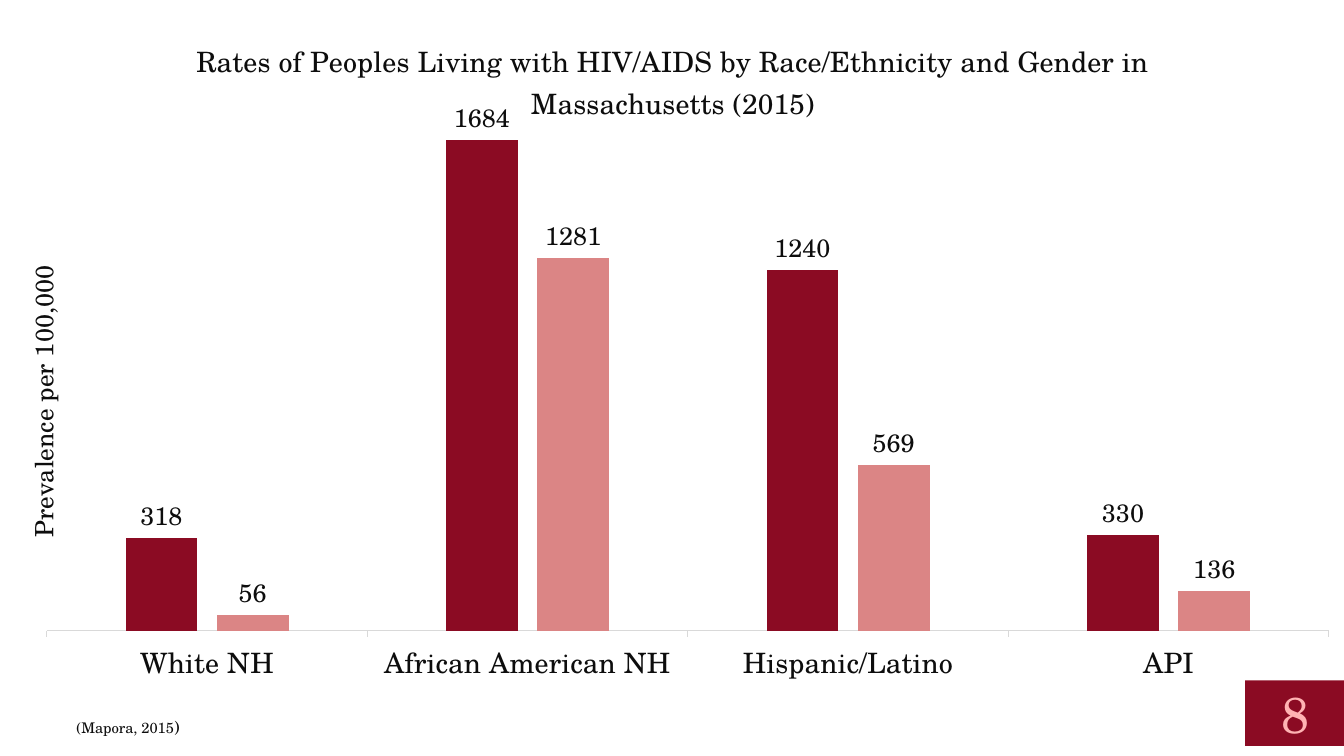
from dataclasses import dataclass

from lxml import etree
from pptx import Presentation
from pptx.chart.chart import Chart
from pptx.chart.data import CategoryChartData
from pptx.dml.color import RGBColor
from pptx.enum.chart import XL_CHART_TYPE, XL_LABEL_POSITION, XL_TICK_MARK
from pptx.enum.shapes import MSO_SHAPE
from pptx.enum.text import MSO_ANCHOR, PP_ALIGN
from pptx.oxml.ns import qn
from pptx.slide import Slide
from pptx.text.text import Font
from pptx.util import Inches, Pt

COLUMN_CLUSTERED = XL_CHART_TYPE.COLUMN_CLUSTERED
OUTSIDE_END = XL_LABEL_POSITION.OUTSIDE_END
TICK_OUTSIDE = XL_TICK_MARK.OUTSIDE
TICK_NONE = XL_TICK_MARK.NONE
RECTANGLE = MSO_SHAPE.RECTANGLE
MIDDLE = MSO_ANCHOR.MIDDLE
CENTER = PP_ALIGN.CENTER

FONT_NAME = "TeX Gyre Schola"
COLORS = {
    "text": "0D0D0D",
    "axis": "D9D9D9",
    "male": "8B0B23",
    "female": "DB8585",
    "number": "FFB3B3",
}
CATEGORIES = ["White NH", "African American NH", "Hispanic/Latino", "API"]


@dataclass
class GenderSeries:
    name: str
    rates: list[int]
    color: str


SERIES = [
    GenderSeries("Male", [318, 1684, 1240, 330], "male"),
    GenderSeries("Female", [56, 1281, 569, 136], "female"),
]


def color(name: str) -> RGBColor:
    return RGBColor.from_string(COLORS[name])


def style_font(font: Font, size: float, color_name: str = "text") -> None:
    font.name = FONT_NAME
    font.size = Pt(size)
    font.bold = False
    font.color.rgb = color(color_name)


def set_layout(parent: etree.ElementBase, index: int, **settings: float | str) -> None:
    for old_layout in parent.findall(qn("c:layout")):
        parent.remove(old_layout)
    layout = etree.Element(qn("c:layout"))
    manual = etree.SubElement(layout, qn("c:manualLayout"))
    for tag, value in settings.items():
        etree.SubElement(manual, qn(f"c:{tag}")).set("val", str(value))
    parent.insert(index, layout)


def add_title(owner: Chart, text: str, size: float) -> None:
    owner.text_frame.text = text
    for run in owner.text_frame.paragraphs[0].runs:
        style_font(run.font, size)


def add_rates_chart(slide: Slide) -> None:
    data = CategoryChartData()
    data.categories = CATEGORIES
    for gender in SERIES:
        data.add_series(gender.name, gender.rates)
    chart = slide.shapes.add_chart(
        COLUMN_CLUSTERED, Inches(0.04), Inches(0.03), Inches(13.26), Inches(7.12), data
    ).chart
    chart.has_legend = False
    style_font(chart.font, 18)

    chart.has_title = True
    title = chart.chart_title
    add_title(
        title,
        "Rates of Peoples Living with HIV/AIDS by Race/Ethnicity and Gender in Massachusetts (2015)",
        20,
    )
    title.include_in_layout = False
    set_layout(title._element, 1, xMode="edge", yMode="edge", x=0.14, y=0.04)

    category_axis = chart.category_axis
    category_axis.major_tick_mark = TICK_OUTSIDE
    category_axis.format.line.color.rgb = color("axis")
    category_axis.format.line.width = Pt(0.75)
    style_font(category_axis.tick_labels.font, 20)

    value_axis = chart.value_axis
    value_axis.minimum_scale = 0
    value_axis.maximum_scale = 1800
    value_axis.has_major_gridlines = False
    value_axis.major_tick_mark = TICK_NONE
    value_axis.visible = False
    axis_title = value_axis.axis_title
    add_title(axis_title, "Prevalence per 100,000", 18)
    axis_title.text_frame._txBody.bodyPr.set("rot", "-5400000")
    axis_title.text_frame._txBody.bodyPr.set("vert", "horz")
    set_layout(axis_title._element, 1, xMode="edge", yMode="edge", x=0.01, y=0.36)

    plot = chart.plots[0]
    plot.gap_width = 219
    plot.overlap = -27
    plot.vary_by_categories = False
    for series, gender in zip(plot.series, SERIES):
        series.format.fill.solid()
        series.format.fill.fore_color.rgb = color(gender.color)
        labels = series.data_labels
        labels.show_value = True
        labels.position = OUTSIDE_END
        style_font(labels.font, 18)
    plot_area = chart._chartSpace.find(".//" + qn("c:plotArea"))
    set_layout(
        plot_area, 0, layoutTarget="inner", xMode="edge", yMode="edge",
        x=0.032, y=0.144, w=0.959, h=0.731,
    )


def add_citation(slide: Slide) -> None:
    box = slide.shapes.add_textbox(Inches(0.66), Inches(7.01), Inches(5.88), Inches(0.4))
    frame = box.text_frame
    frame.word_wrap = True
    frame.vertical_anchor = MIDDLE
    for text, size in (("(Mapora, 2015", 10.5), (")", 12)):
        run = frame.paragraphs[0].add_run()
        run.text = text
        style_font(run.font, size)


def add_page_number(slide: Slide) -> None:
    shape = slide.shapes.add_shape(
        RECTANGLE, Inches(12.35), Inches(6.75), Inches(1), Inches(0.65)
    )
    shape.shadow.inherit = False
    shape.fill.solid()
    shape.fill.fore_color.rgb = color("male")
    shape.line.fill.background()
    shape.text_frame.text = "8"
    shape.text_frame.vertical_anchor = MIDDLE
    paragraph = shape.text_frame.paragraphs[0]
    paragraph.alignment = CENTER
    style_font(paragraph.runs[0].font, 36, "number")


def main() -> None:
    presentation = Presentation()
    presentation.slide_width = Inches(13.33)
    presentation.slide_height = Inches(7.5)
    slide = presentation.slides.add_slide(presentation.slide_layouts[6])
    add_citation(slide)
    add_rates_chart(slide)
    add_page_number(slide)
    presentation.save("out.pptx")


if __name__ == "__main__":
    main()
